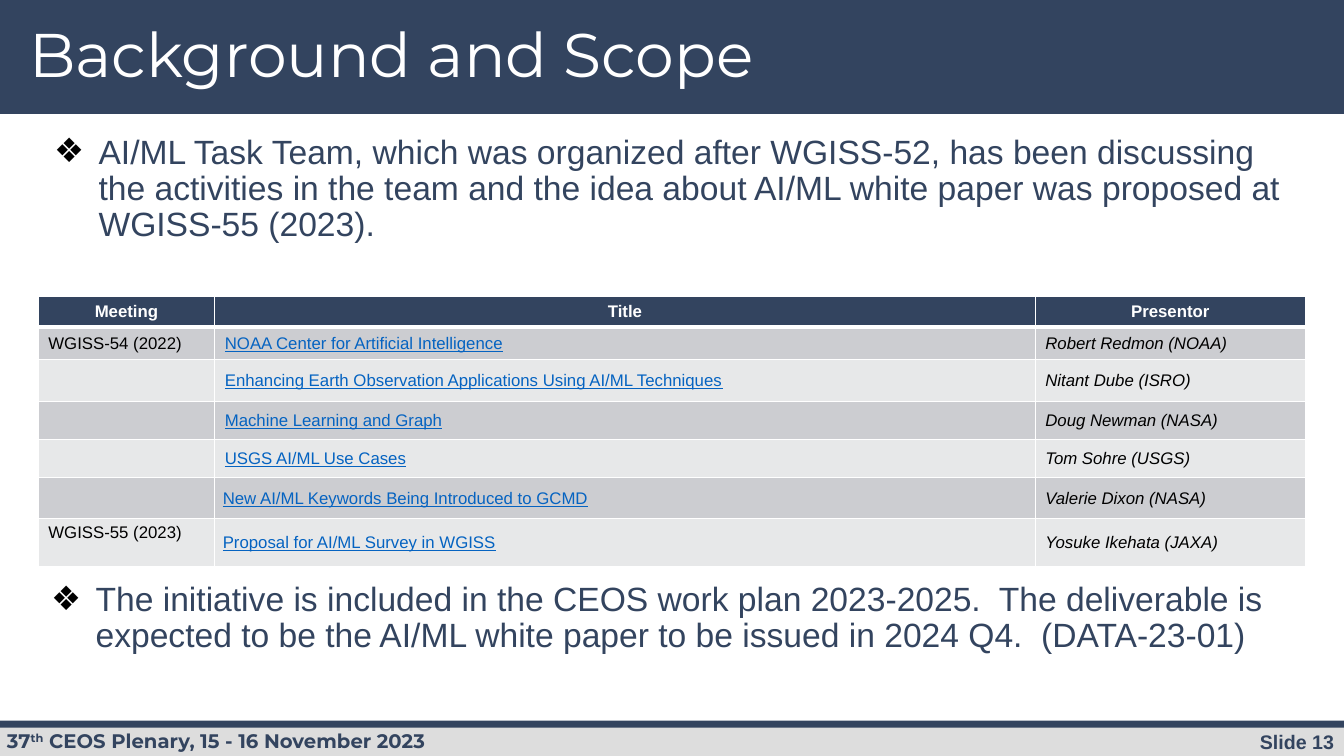
import pptx
import pptx.util
import pptx.dml.color
import pptx.enum.shapes
import pptx.enum.text
import pptx.oxml
import pptx.oxml.ns

RGB = pptx.dml.color.RGBColor
NAVY = RGB(0x33, 0x44, 0x5F)
GREY = RGB(0xDD, 0xDD, 0xDD)
BAND_DARK = RGB(0xCC, 0xCD, 0xD1)
BAND_LIGHT = RGB(0xE7, 0xE8, 0xE9)
LINK_BLUE = RGB(0x05, 0x63, 0xC1)
WHITE = RGB(0xFF, 0xFF, 0xFF)
BLACK = RGB(0, 0, 0)
ALIGN = pptx.enum.text.PP_ALIGN
ANCHOR = pptx.enum.text.MSO_ANCHOR
Pt = pptx.util.Pt
NS = pptx.oxml.ns.nsdecls("a")

prs = pptx.Presentation()
prs.slide_width = W = pptx.util.Inches(13.33)
prs.slide_height = H = pptx.util.Inches(7.5)
s = prs.slides.add_slide(prs.slide_layouts[6])


def share(x, y, w, h):
    """Turn percentages of the slide's width and height into lengths."""
    return [int(W * x / 100), int(H * y / 100), int(W * w / 100), int(H * h / 100)]


def add_text(place, text, size, font, color, bold=False):
    tf = s.shapes.add_textbox(*share(*place)).text_frame
    tf.word_wrap = True
    p = tf.paragraphs[0]
    if text:
        p.text = text
    f = p.font
    f.size, f.name, f.bold, f.color.rgb = Pt(size), font, bold, color
    return p


# Header and footer bars
for place, color in [
    ((0, 0, 100, 15.07), NAVY),
    ((0, 95.87, 100, 4.13), GREY),
    ((0, 95.33, 100, 0.93), NAVY),
]:
    sp = s.shapes.add_shape(pptx.enum.shapes.MSO_SHAPE.RECTANGLE, *share(*place))
    sp.shadow.inherit = False
    sp.fill.solid()
    sp.fill.fore_color.rgb = color
    sp.line.fill.background()

# Footer text
p = add_text((84.23, 95.87, 15.77, 4.13), "Slide 13", 14, "Arial", NAVY, True)
p.alignment = ALIGN.RIGHT
p = add_text((-0.22, 95.73, 40.42, 4.27), "", 14, "Montserrat", NAVY, True)
for text, baseline in [("37", 0), ("th", 30000), (" CEOS Plenary, 15 - 16 November 2023", 0)]:
    r = p.add_run()
    r.text = text
    if baseline:
        r._r.get_or_add_rPr().set("baseline", str(baseline))

# Title
p = add_text((1.43, 2.53, 77.03, 11.33), "Background and Scope", 44, "Montserrat", WHITE)
p.line_spacing = 0.9

# Bulleted statements above and below the table
for place, text in [
    ((2.85, 17.2, 94.28, 18.93),
     "AI/ML Task Team, which was organized after WGISS-52, has been discussing the activities "
     "in the team and the idea about AI/ML white paper was proposed at WGISS-55 (2023)."),
    ((2.63, 76.4, 94.28, 12.8),
     "The initiative is included in the CEOS work plan 2023-2025.  The deliverable is expected "
     "to be the AI/ML white paper to be issued in 2024 Q4.  (DATA-23-01)"),
]:
    p = add_text(place, text, 24, "Arial", NAVY)
    p.line_spacing = 0.9
    pPr = p._p.get_or_add_pPr()
    pPr.set("marL", str(pptx.util.Inches(0.5)))
    pPr.set("indent", str(pptx.util.Inches(-0.44)))
    defaults = pPr.find(pptx.oxml.ns.qn("a:defRPr"))
    for xml in (
        f'<a:buClr {NS}><a:srgbClr val="{BLACK}"/></a:buClr>',
        f'<a:buFont {NS} typeface="Arial"/>',
        f'<a:buChar {NS} char="❖"/>',
    ):
        defaults.addprevious(pptx.oxml.parse_xml(xml))

# Table of presentations
rows = [
    ("Meeting", "Title", "Presentor"),
    ("WGISS-54 (2022)", "NOAA Center for Artificial Intelligence", "Robert Redmon (NOAA)"),
    ("", "Enhancing Earth Observation Applications Using AI/ML Techniques", "Nitant Dube (ISRO)"),
    ("", "Machine Learning and Graph", "Doug Newman (NASA)"),
    ("", "USGS AI/ML Use Cases", "Tom Sohre (USGS)"),
    ("", "New AI/ML Keywords Being Introduced to GCMD", "Valerie Dixon (NASA)"),
    ("WGISS-55 (2023)", "Proposal for AI/ML Survey in WGISS", "Yosuke Ikehata (JAXA)"),
]
col_shares = [13.13, 61.05, 20.1]
row_shares = [3.73, 4.4, 5.47, 5.07, 5.07, 5.4, 6.3]
place = share(2.85, 39.2, sum(col_shares), sum(row_shares))
table = s.shapes.add_table(len(rows), len(col_shares), *place).table
for column, width in zip(table.columns, col_shares):
    column.width = int(W * width / 100)

for i, (row, height) in enumerate(zip(rows, row_shares)):
    table.rows[i].height = int(H * height / 100)
    for j, text in enumerate(row):
        cell = table.cell(i, j)
        cell.vertical_anchor = ANCHOR.MIDDLE
        if i == len(rows) - 1 and j == 0:
            cell.vertical_anchor = ANCHOR.TOP
        if i >= 5 and j == 1:
            cell.margin_left = cell.margin_right = pptx.util.Inches(0.08)
            cell.margin_top = cell.margin_bottom = pptx.util.Inches(0.08)

        # White borders, thicker under the header
        tcPr = cell._tc.get_or_add_tcPr()
        for side in "LRTB":
            thick = (i, side) in [(0, "B"), (1, "T")]
            tcPr.append(pptx.oxml.parse_xml(
                f'<a:ln{side} {NS} w="{Pt(3 if thick else 1)}"><a:solidFill>'
                f'<a:srgbClr val="{WHITE}"/></a:solidFill></a:ln{side}>'))
        cell.fill.solid()
        cell.fill.fore_color.rgb = NAVY if i == 0 else BAND_DARK if i % 2 else BAND_LIGHT

        p = cell.text_frame.paragraphs[0]
        if text:
            p.text = text
        f = p.font
        f.size, f.name, f.bold = Pt(12), "Arial", i == 0
        if i == 0:
            p.alignment = ALIGN.CENTER
            f.color.rgb = WHITE
        else:
            f.color.rgb = LINK_BLUE if j == 1 else BLACK
            f.underline = j == 1
            f.italic = j == 2

prs.save("out.pptx")
